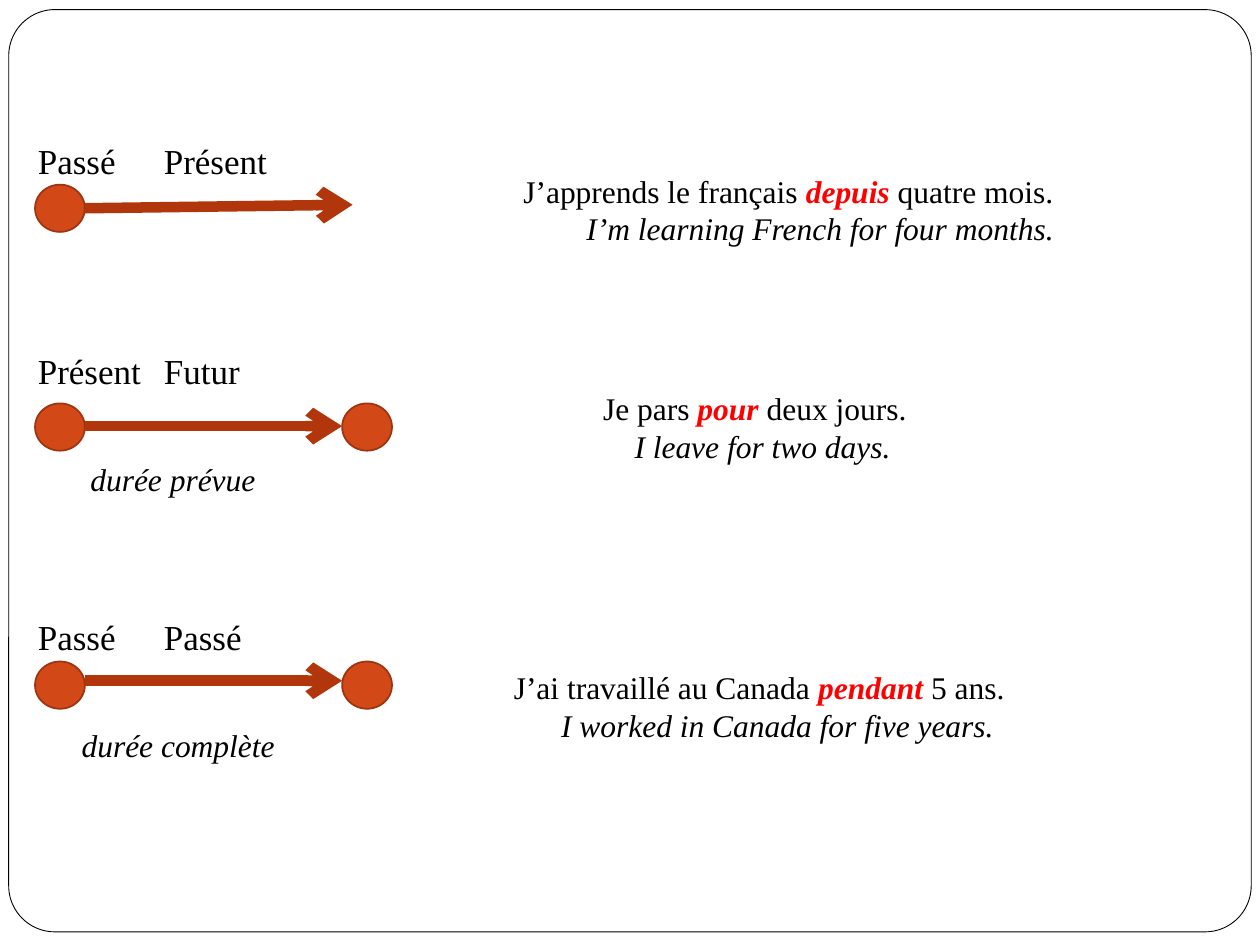
from pptx import Presentation
from pptx.dml.color import RGBColor as RGB
from pptx.enum.shapes import MSO_CONNECTOR as LINE, MSO_SHAPE as SHAPE
from pptx.enum.text import MSO_ANCHOR as ANCHOR, MSO_AUTO_SIZE as FIT, PP_ALIGN as ALIGN
from pptx.oxml.ns import qn
from pptx.util import Pt
from lxml.etree import SubElement as Sub

INK = {k: RGB.from_string(v) for k, v in {
    "text": "000000", "key": "FF0000", "page": "FFFFFF",
    "dot": "D34817", "rim": "9C3511", "arrow": "B1360B"}.items()}


def write(para, text, size=18, color="text", bold=False, italic=False):
    run = para.add_run()
    run.text = text
    font = run.font
    font.name, font.size = "Times New Roman", Pt(size)
    font.bold, font.italic = bold, italic
    font.color.rgb = INK[color]


def paint(shape, fill, line, width):
    shape.shadow.inherit = False
    shape.fill.solid()
    shape.fill.fore_color.rgb = INK[fill]
    shape.line.color.rgb = INK[line]
    shape.line.width = Pt(width)


deck = Presentation()
deck.slide_width, deck.slide_height = Pt(720), Pt(540)
slide = deck.slides.add_slide(deck.slide_layouts[1])
shapes = slide.shapes
title = shapes.title._element
title.getparent().remove(title)
body = slide.placeholders[1]

# Rounded frame behind everything
frame = shapes.add_shape(SHAPE.ROUNDED_RECTANGLE, Pt(5), Pt(5.5), Pt(710), Pt(527))
frame.adjustments[0] = 0.05
paint(frame, "page", "text", 0.5)
body._element.addprevious(frame._element)

# Timeline labels: text, size, italic, space before, indent, tab stop
labels = [
    ("Passé\tPrésent", 20, False, 0, 0, 134.5),
    ("Présent\tFutur", 20, False, 96.5, 0, 148.5),
    ("durée prévue", 18, True, 39, 30, None),
    ("Passé\tPassé", 20, False, 67, 0, 139),
    ("durée complète", 18, True, 39, 25, None),
]
body.left, body.top, body.width, body.height = Pt(14.4), Pt(15), Pt(692), Pt(510.5)
box = body.text_frame
box.auto_size, box.vertical_anchor = FIT.NONE, ANCHOR.TOP
box.margin_top = Pt(64.5)
for i, (text, size, italic, gap, indent, stop) in enumerate(labels):
    para = box.add_paragraph() if i else box.paragraphs[0]
    para.alignment, para.line_spacing = ALIGN.LEFT, 1.0
    para.space_before, para.space_after = Pt(gap), Pt(0)
    props = para._p.get_or_add_pPr()
    props.set("marL", str(Pt(indent)))
    props.set("indent", "0")
    Sub(props, qn("a:buNone"))
    if stop:
        tabs = Sub(props, qn("a:tabLst"))
        Sub(tabs, qn("a:tab"), pos=str(Pt(stop)), algn="l")
    write(para, text, size, italic=italic)

# Timelines: dot top, dot lefts, arrow start y, arrow end x and y
WIDE, HIGH, NEAR, FAR = 28.5, 27, 20, 195.5
lines = [
    (105.5, [NEAR], 119, 201.5, 117),
    (230.5, [NEAR, FAR], 243.5, FAR, 243.5),
    (378, [NEAR, FAR], 389, FAR, 389),
]
for top, dots, start, x, y in lines:
    for left in dots:
        dot = shapes.add_shape(SHAPE.OVAL, Pt(left), Pt(top), Pt(WIDE), Pt(HIGH))
        paint(dot, "dot", "rim", 1)
    arrow = shapes.add_connector(LINE.STRAIGHT, Pt(NEAR + WIDE), Pt(start), Pt(x), Pt(y))
    arrow.line.color.rgb, arrow.line.width = INK["arrow"], Pt(6)
    Sub(arrow.line._get_or_add_ln(), qn("a:tailEnd"), type="arrow")
    Sub(arrow._element.spPr, qn("a:effectLst"))

# Examples: left, top, width, sentence parts, translation, its indent
examples = [
    (292, 94.5, 365, ("J’apprends le français ", "depuis ", "quatre mois."),
     "I’m learning French for four months.", 36),
    (337.5, 219, 218, ("Je pars ", "pour ", "deux jours."),
     "I leave for two days.", 18),
    (286.5, 378, 333.5, ("J’ai travaillé au Canada ", "pendant ", "5 ans."),
     "I worked in Canada for five years.", 27),
]
for left, top, width, (head, key, tail), gloss, indent in examples:
    box = shapes.add_textbox(Pt(left), Pt(top), Pt(width), Pt(51)).text_frame
    box.word_wrap = True
    para = box.paragraphs[0]
    write(para, head)
    write(para, key, color="key", bold=True, italic=True)
    write(para, tail)
    para = box.add_paragraph()
    para._p.get_or_add_pPr().set("marL", str(Pt(indent)))
    write(para, gloss, italic=True)

deck.save("out.pptx")
